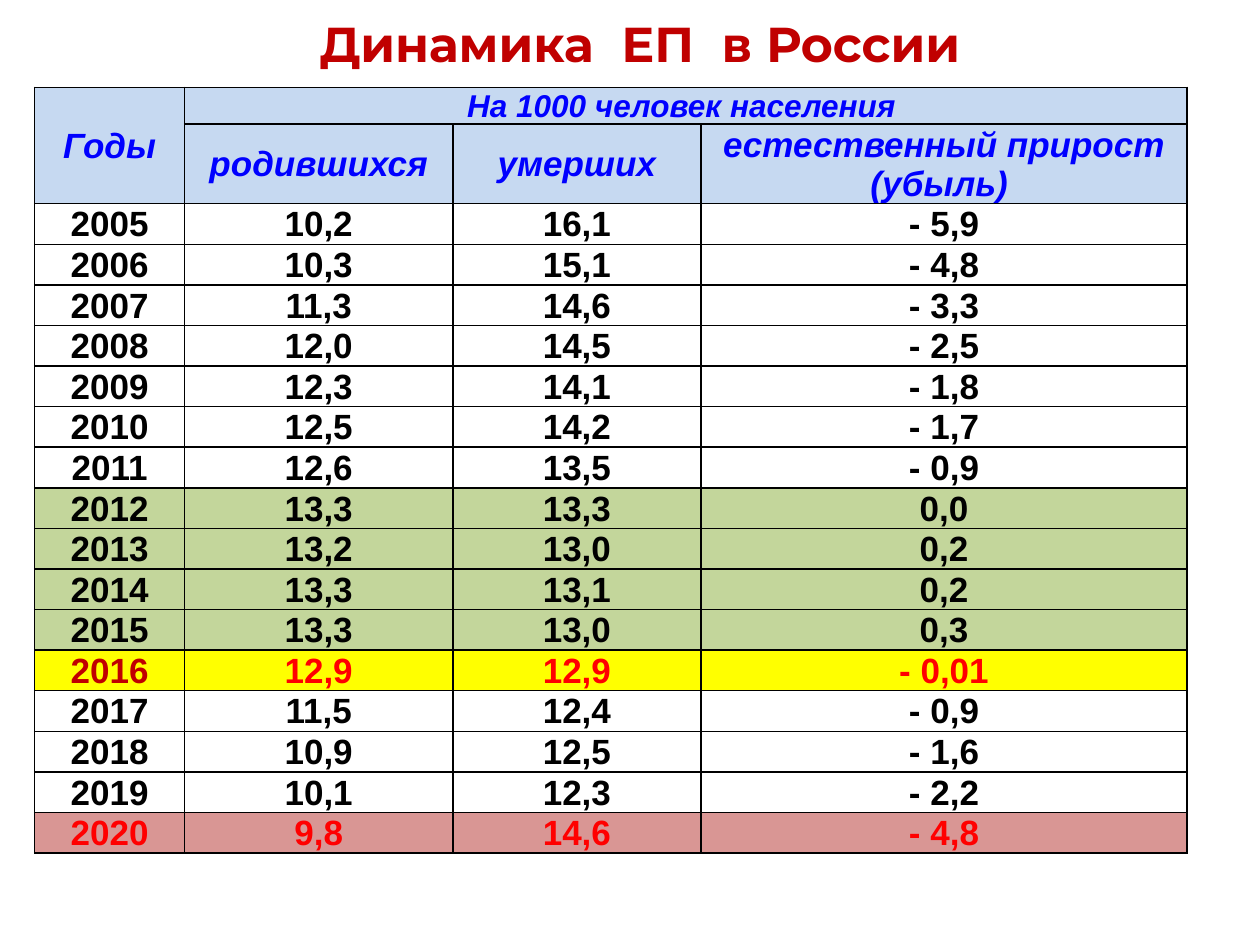
from lxml import etree
from pptx import Presentation
from pptx.dml.color import RGBColor
from pptx.enum.text import MSO_ANCHOR, MSO_AUTO_SIZE, PP_ALIGN
from pptx.oxml.ns import qn
from pptx.util import Cm, Pt

CENTER = PP_ALIGN.CENTER
TOP, MIDDLE, BOTTOM = MSO_ANCHOR.TOP, MSO_ANCHOR.MIDDLE, MSO_ANCHOR.BOTTOM
NO_AUTOFIT = MSO_AUTO_SIZE.NONE
TITLE_ONLY = 5

COLORS = {
    "title": "C00000",
    "header_text": "0000FF",
    "header": "C6D9F1",
    "text": "000000",
    "border": "000000",
    "alert": "FF0000",
    "turning_year": "C00000",
    "white": "FFFFFF",
    "growth": "C3D69B",
    "turning": "FFFF00",
    "decline": "D99694",
}

COLUMN_WIDTHS = [3.02, 5.41, 5.0, 9.8]
HEADER_HEIGHTS = [0.74, 1.59]
YEAR_HEIGHT = 0.81

YEARS = [
    ("2005", "10,2", "16,1", "- 5,9"),
    ("2006", "10,3", "15,1", "- 4,8"),
    ("2007", "11,3", "14,6", "- 3,3"),
    ("2008", "12,0", "14,5", "- 2,5"),
    ("2009", "12,3", "14,1", "- 1,8"),
    ("2010", "12,5", "14,2", "- 1,7"),
    ("2011", "12,6", "13,5", "- 0,9"),
    ("2012", "13,3", "13,3", "0,0"),
    ("2013", "13,2", "13,0", "0,2"),
    ("2014", "13,3", "13,1", "0,2"),
    ("2015", "13,3", "13,0", "0,3"),
    ("2016", "12,9", "12,9", "- 0,01"),
    ("2017", "11,5", "12,4", "- 0,9"),
    ("2018", "10,9", "12,5", "- 1,6"),
    ("2019", "10,1", "12,3", "- 2,2"),
    ("2020", "9,8", "14,6", "- 4,8"),
]
YEAR_FILLS = {
    **dict.fromkeys(["2010", "2017", "2018", "2019"], "white"),
    **dict.fromkeys(["2012", "2013", "2014", "2015"], "growth"),
    "2016": "turning",
    "2020": "decline",
}


def rgb(name):
    return RGBColor.from_string(COLORS[name])


def write(frame, text, size=20, font="Arial", color="text", italic=False):
    paragraph = frame.paragraphs[0]
    paragraph.alignment = CENTER
    run = paragraph.add_run()
    run.text = text
    run.font.size = Pt(size)
    run.font.name = font
    run.font.bold = True
    run.font.italic = italic
    run.font.color.rgb = rgb(color)


def add_borders(cell):
    properties = cell._tc.get_or_add_tcPr()
    for position, side in enumerate(("lnL", "lnR", "lnT", "lnB")):
        line = etree.Element(qn(f"a:{side}"), w=str(Pt(1)))
        fill = etree.SubElement(line, qn("a:solidFill"))
        etree.SubElement(fill, qn("a:srgbClr"), val=COLORS["border"])
        properties.insert(position, line)


def style_cell(cell, fill=None):
    cell.margin_left = cell.margin_right = cell.margin_top = Cm(0.03)
    cell.margin_bottom = 0
    if fill:
        cell.fill.solid()
        cell.fill.fore_color.rgb = rgb(fill)
    else:
        cell.fill.background()
    add_borders(cell)


def fill_header(table):
    for row in range(len(HEADER_HEIGHTS)):
        for column in range(len(COLUMN_WIDTHS)):
            style_cell(table.cell(row, column), "header")
    table.cell(0, 0).merge(table.cell(1, 0))
    table.cell(0, 1).merge(table.cell(0, 3))
    headings = [
        (0, 0, "Годы", 20, MIDDLE),
        (0, 1, "На 1000 человек населения ", 18, TOP),
        (1, 1, "родившихся", 20, MIDDLE),
        (1, 2, "умерших", 20, MIDDLE),
        (1, 3, "естественный прирост (убыль) ", 20, TOP),
    ]
    for row, column, text, size, anchor in headings:
        cell = table.cell(row, column)
        cell.vertical_anchor = anchor
        write(cell.text_frame, text, size=size, color="header_text", italic=True)


def fill_years(table):
    for row, values in enumerate(YEARS, start=len(HEADER_HEIGHTS)):
        year = values[0]
        for column, value in enumerate(values):
            cell = table.cell(row, column)
            style_cell(cell, YEAR_FILLS.get(year))
            cell.vertical_anchor = BOTTOM
            color = "alert" if year in ("2016", "2020") else "text"
            if value == "2016":
                color = "turning_year"
            write(cell.text_frame, value, color=color)


def add_population_table(slide, left, top):
    heights = HEADER_HEIGHTS + [YEAR_HEIGHT] * len(YEARS)
    table = slide.shapes.add_table(
        len(heights), len(COLUMN_WIDTHS), Cm(left), Cm(top),
        Cm(sum(COLUMN_WIDTHS)), Cm(sum(heights)),
    ).table
    table.first_row = False
    table.horz_banding = False
    for column, width in zip(table.columns, COLUMN_WIDTHS):
        column.width = Cm(width)
    for row, height in zip(table.rows, heights):
        row.height = Cm(height)
    fill_header(table)
    fill_years(table)


def place_title(slide, left, top, width, height):
    title = slide.shapes.title
    title.left, title.top = Cm(left), Cm(top)
    title.width, title.height = Cm(width), Cm(height)
    frame = title.text_frame
    frame.auto_size = NO_AUTOFIT
    frame.vertical_anchor = TOP
    write(frame, "Динамика  ЕП  в России", size=28, font="Montserrat", color="title")


def main():
    presentation = Presentation()
    presentation.slide_width, presentation.slide_height = Cm(25.4), Cm(19.05)
    slide = presentation.slides.add_slide(presentation.slide_layouts[TITLE_ONLY])
    add_population_table(slide, 0.7, 1.76)
    place_title(slide, 0.7, 0.15, 24.4, 1.45)
    presentation.save("out.pptx")


if __name__ == "__main__":
    main()
